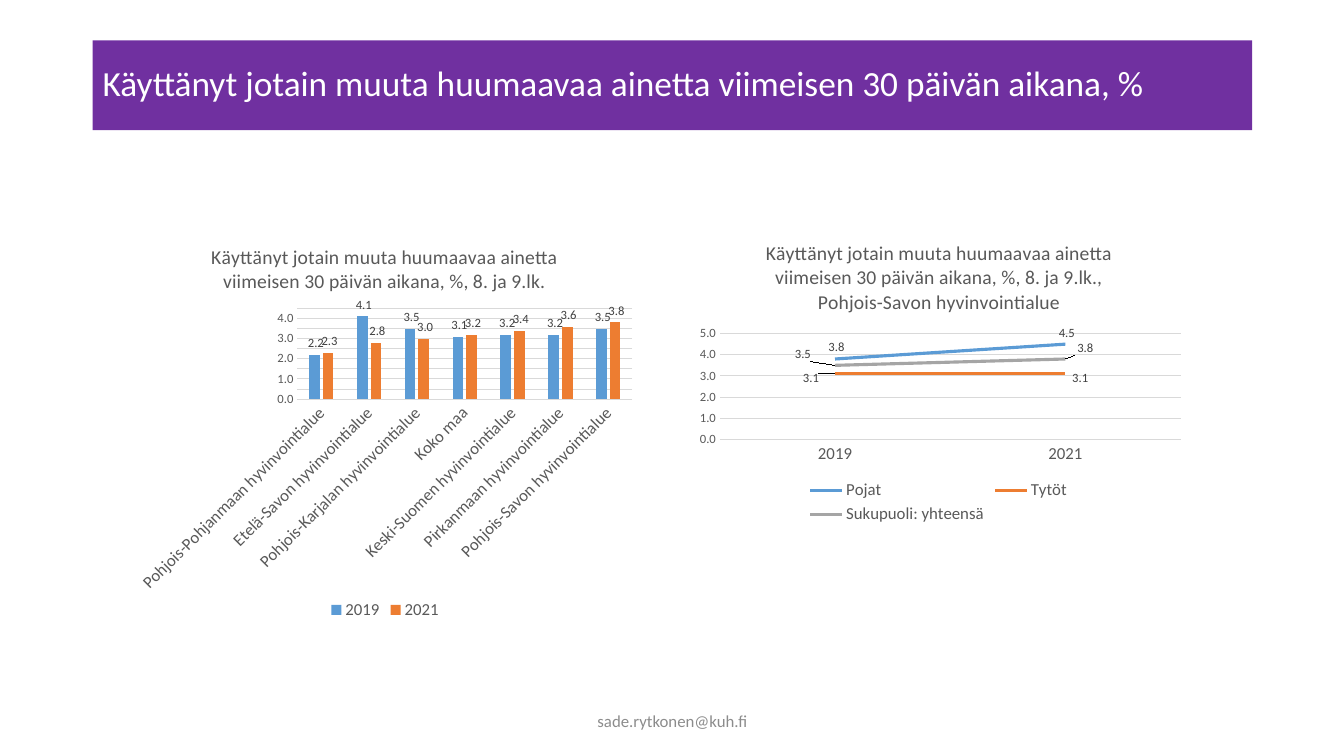
"""Builds a slide comparing substance use by region, year and gender."""
from dataclasses import dataclass, field

from lxml.etree import SubElement
from pptx import Presentation
from pptx.chart.chart import Chart
from pptx.chart.data import CategoryChartData
from pptx.dml.color import RGBColor
from pptx.enum.chart import XL_CHART_TYPE, XL_LABEL_POSITION, XL_LEGEND_POSITION, XL_TICK_MARK
from pptx.enum.shapes import MSO_SHAPE
from pptx.enum.text import MSO_ANCHOR, PP_ALIGN
from pptx.oxml.ns import qn
from pptx.slide import Slide
from pptx.text.text import Font
from pptx.util import Inches, Pt

FONT = "Calibri"
GREY, GRID, LABEL = "595959", "D9D9D9", "404040"
SERIES_COLORS = ("5B9BD5", "ED7D31", "A5A5A5")
NUMBER_FORMAT = "#\\ ##0.0"
TOPIC = "Käyttänyt jotain muuta huumaavaa ainetta viimeisen 30 päivän aikana, %"
Frame = tuple[float, float, float, float]
Spot = tuple[float, float]


@dataclass
class Banner:
    text: str
    frame: Frame
    size: float
    color: str
    align: PP_ALIGN
    line_spacing: float = 1.0
    fill: str | None = None


@dataclass
class Panel:
    kind: XL_CHART_TYPE
    frame: Frame
    title: str
    categories: list[str]
    series: dict[str, list[float]]
    maximum: float
    step: float
    title_spot: Spot
    plot_area: Frame
    label_shifts: dict[str, tuple[Spot, Spot]] = field(default_factory=dict)


BANNERS = [
    Banner(TOPIC, (0.92, 0.4, 11.5, 0.89), 25.2, "FFFFFF", PP_ALIGN.LEFT, 0.9, "7030A0"),
    Banner("sade.rytkonen@kuh.fi", (4.42, 6.95, 4.5, 0.4), 12, "8C8C8C", PP_ALIGN.CENTER),
]
REGIONS = ["Pohjois-Pohjanmaan hyvinvointialue", "Etelä-Savon hyvinvointialue",
           "Pohjois-Karjalan hyvinvointialue", "Koko maa", "Keski-Suomen hyvinvointialue",
           "Pirkanmaan hyvinvointialue", "Pohjois-Savon hyvinvointialue"]
REGION_PANEL = Panel(
    XL_CHART_TYPE.COLUMN_CLUSTERED, (1.27, 2.25, 5.1, 3.94), f"{TOPIC}, 8. ja 9.lk.", REGIONS,
    {"2019": [2.2, 4.1, 3.5, 3.1, 3.2, 3.2, 3.5], "2021": [2.3, 2.8, 3, 3.2, 3.4, 3.6, 3.8]},
    4.5, 0.5, (0.79, 0.13), (1.68, 0.81, 3.32, 0.9))
GENDER_PANEL = Panel(
    XL_CHART_TYPE.LINE, (6.81, 2.24, 5, 3),
    f"{TOPIC}, 8. ja 9.lk., Pohjois-Savon hyvinvointialue", ["2019", "2021"],
    {"Pojat": [3.8, 4.5], "Tytöt": [3.1, 3.1], "Sukupuoli: yhteensä": [3.5, 3.8]},
    5, 1, (0.75, 0.1), (0.33, 1.07, 4.57, 1.05),
    {"Tytöt": ((-0.12, 0.04), (0, 0.04)), "Sukupuoli: yhteensä": ((-0.2, -0.11), (0.05, -0.11))})


def rgb(color: str) -> RGBColor:
    """Turn a hex string into a colour."""
    return RGBColor.from_string(color)


def style_font(font: Font, size: float, color: str) -> None:
    """Set typeface, size and colour, without bold."""
    font.name, font.size, font.bold = FONT, Pt(size), False
    font.color.rgb = rgb(color)


def draw_banner(page: Slide, banner: Banner) -> None:
    """Draw one line of text, on a filled bar if a fill is given."""
    place = [Inches(length) for length in banner.frame]
    if banner.fill:
        box = page.shapes.add_shape(MSO_SHAPE.RECTANGLE, *place)
        box.shadow.inherit = False
        box.fill.solid()
        box.fill.fore_color.rgb = rgb(banner.fill)
        box.line.fill.background()
    else:
        box = page.shapes.add_textbox(*place)
    frame = box.text_frame
    frame.word_wrap = True
    frame.vertical_anchor = MSO_ANCHOR.MIDDLE
    frame.text = banner.text
    para = frame.paragraphs[0]
    para.alignment = banner.align
    para.line_spacing = banner.line_spacing
    style_font(para.runs[0].font, banner.size, banner.color)


def set_layout(parent, index: int, panel: Panel, lengths: Spot | Frame, edge: bool = True) -> None:
    """Place a chart part by lengths in inches, from the chart edge or as a shift."""
    for old in parent.findall(qn("c:layout")):
        parent.remove(old)
    layout = SubElement(parent, qn("c:layout"))
    parent.insert(index, layout)
    manual = SubElement(layout, qn("c:manualLayout"))
    if len(lengths) == 4:
        SubElement(manual, qn("c:layoutTarget")).set("val", "inner")
    if edge:
        for side in "xy":
            SubElement(manual, qn(f"c:{side}Mode")).set("val", "edge")
    for side, length, whole in zip("xywh", lengths, panel.frame[2:] * 2):
        SubElement(manual, qn(f"c:{side}")).set("val", str(length / whole))


def style_axes(chart: Chart, panel: Panel) -> None:
    """Format both axes and the grid."""
    for axis, size in ((chart.category_axis, 12), (chart.value_axis, 9)):
        axis.major_tick_mark = axis.minor_tick_mark = XL_TICK_MARK.NONE
        style_font(axis.tick_labels.font, size, GREY)
    values = chart.value_axis
    values.minimum_scale, values.maximum_scale = 0, panel.maximum
    values.major_unit = panel.step
    values.tick_labels.number_format = NUMBER_FORMAT
    values.tick_labels.number_format_is_linked = False
    values.format.line.fill.background()
    for line in (chart.category_axis.format.line, values.major_gridlines.format.line):
        line.color.rgb = rgb(GRID)
        line.width = Pt(0.75)


def style_series(chart: Chart, panel: Panel, is_line: bool) -> None:
    """Colour the series and label their values."""
    for series, color in zip(chart.plots[0].series, SERIES_COLORS):
        labels = series.data_labels
        labels.show_value = True
        labels.number_format = NUMBER_FORMAT
        labels.number_format_is_linked = False
        labels.position = XL_LABEL_POSITION.ABOVE if is_line else XL_LABEL_POSITION.OUTSIDE_END
        style_font(labels.font, 9, LABEL)
        if not is_line:
            series.format.fill.solid()
            series.format.fill.fore_color.rgb = rgb(color)
            series.invert_if_negative = False
            continue
        series.smooth = False
        series.format.line.color.rgb = rgb(color)
        series.format.line.width = Pt(2.25)
        sides = (XL_LABEL_POSITION.LEFT, XL_LABEL_POSITION.RIGHT)
        for point, (side, shift) in enumerate(zip(sides, panel.label_shifts.get(series.name, ()))):
            label = series.points[point].data_label
            style_font(label.font, 9, LABEL)
            label.position = side
            set_layout(labels._element.findall(qn("c:dLbl"))[point], 1, panel, shift, edge=False)


def draw_panel(page: Slide, panel: Panel) -> None:
    """Draw one chart with title and legend."""
    chart_data = CategoryChartData(number_format=NUMBER_FORMAT)
    chart_data.categories = panel.categories
    for name, values in panel.series.items():
        chart_data.add_series(name, values)
    place = [Inches(length) for length in panel.frame]
    chart = page.shapes.add_chart(panel.kind, *place, chart_data).chart
    style_font(chart.font, 10, "000000")
    title = chart.chart_title.text_frame
    title.text = panel.title
    style_font(title.paragraphs[0].runs[0].font, 14, GREY)
    set_layout(chart.chart_title._element, 1, panel, panel.title_spot)
    set_layout(chart._chartSpace.chart.plotArea, 0, panel, panel.plot_area)
    chart.has_legend = True
    chart.legend.position = XL_LEGEND_POSITION.BOTTOM
    chart.legend.include_in_layout = False
    style_font(chart.legend.font, 12, GREY)
    is_line = panel.kind == XL_CHART_TYPE.LINE
    plot = chart.plots[0]
    plot.vary_by_categories = False
    if not is_line:
        plot.gap_width, plot.overlap = 219, -27
    style_axes(chart, panel)
    style_series(chart, panel, is_line)


def main() -> None:
    """Build and save the deck."""
    deck = Presentation()
    deck.slide_width, deck.slide_height = Inches(13.33), Inches(7.5)
    page = deck.slides.add_slide(deck.slide_layouts[6])
    for banner in BANNERS:
        draw_banner(page, banner)
    for panel in (REGION_PANEL, GENDER_PANEL):
        draw_panel(page, panel)
    deck.save("out.pptx")


if __name__ == "__main__":
    main()
